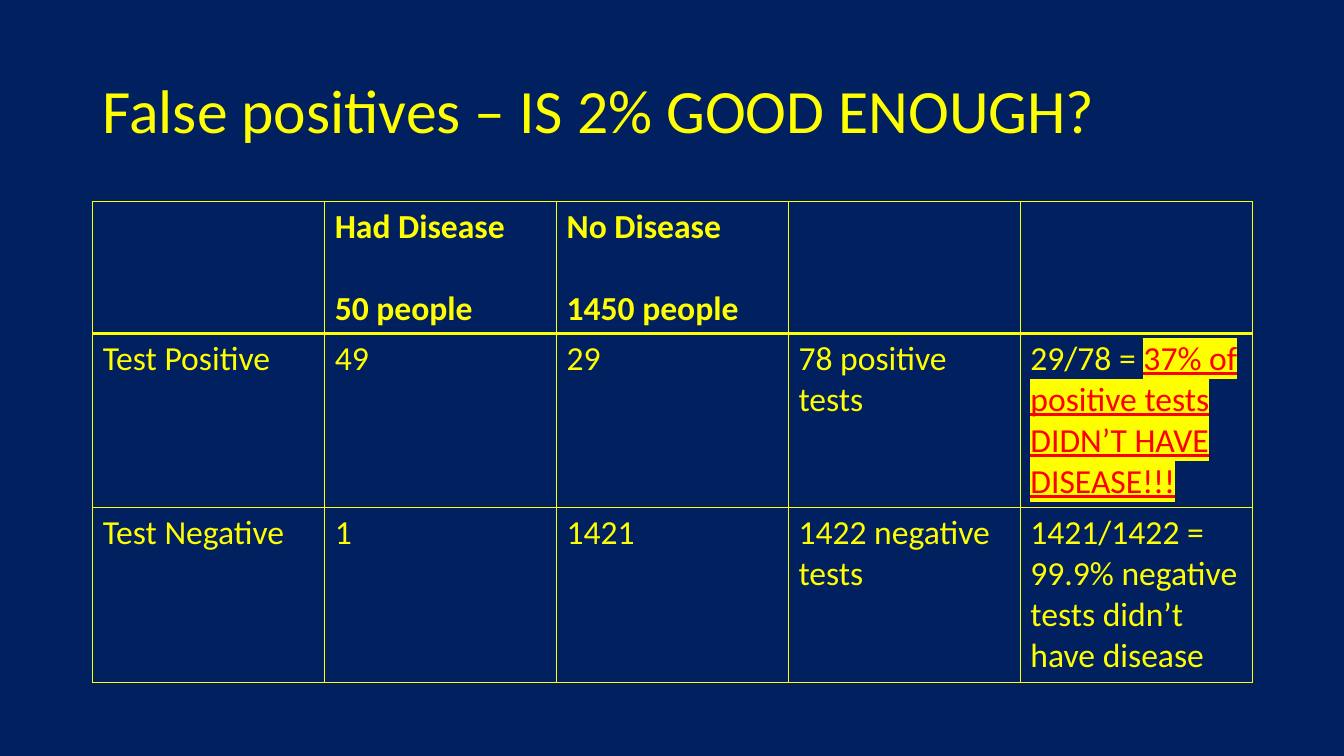
import lxml.etree
import pptx
import pptx.dml.color
import pptx.enum.text
import pptx.oxml.ns
import pptx.util

NAVY = pptx.dml.color.RGBColor(0x00, 0x20, 0x60)
YELLOW = pptx.dml.color.RGBColor(0xFF, 0xFF, 0x00)
RED = pptx.dml.color.RGBColor(0xFF, 0x00, 0x00)
FONT = "Calibri"
SLIDE_WIDTH = pptx.util.Inches(13.33)
SLIDE_HEIGHT = pptx.util.Inches(7.5)
MARGIN = pptx.util.Inches(0.92)
COLUMN_WIDTH = pptx.util.Inches(2.3)
ROW_HEIGHTS = [1.3, 1.73, 1.73]
HEADER_GAP = 29.3

RESULTS = [
    [[], ["Had Disease", "50 people"], ["No Disease", "1450 people"], [], []],
    [["Test Positive"], ["49"], ["29"], ["78 positive tests"], ["29/78 = "]],
    [["Test Negative"], ["1"], ["1421"], ["1422 negative tests"],
     ["1421/1422 = 99.9% negative tests didn’t have disease"]],
]
WARNING = "37% of positive tests DIDN’T HAVE DISEASE!!!"


def add_color(parent, color):
    fill = lxml.etree.SubElement(parent, pptx.oxml.ns.qn("a:solidFill"))
    lxml.etree.SubElement(fill, pptx.oxml.ns.qn("a:srgbClr"), val=str(color))


def add_run(paragraph, text, size, color=YELLOW, bold=False):
    run = paragraph.add_run()
    run.text = text
    run.font.name = FONT
    run.font.size = pptx.util.Pt(size)
    run.font.bold = bold
    run.font.color.rgb = color
    return run


def highlight_run(run, color):
    run.font.underline = True
    highlight = lxml.etree.Element(pptx.oxml.ns.qn("a:highlight"))
    lxml.etree.SubElement(highlight, pptx.oxml.ns.qn("a:srgbClr"), val=str(color))
    run.font.fill
    run.font._element.find(pptx.oxml.ns.qn("a:solidFill")).addnext(highlight)


def set_borders(cell, widths):
    properties = cell._tc.get_or_add_tcPr()
    for position, (side, width) in enumerate(zip("LRTB", widths)):
        line = lxml.etree.Element(
            pptx.oxml.ns.qn(f"a:ln{side}"), w=str(pptx.util.Pt(width)))
        add_color(line, YELLOW)
        properties.insert(position, line)


def add_title(slide, text):
    title = slide.shapes.add_textbox(
        MARGIN, pptx.util.Inches(0.4), COLUMN_WIDTH * 5, pptx.util.Inches(1.45))
    title.text_frame.word_wrap = True
    title.text_frame.vertical_anchor = pptx.enum.text.MSO_ANCHOR.MIDDLE
    paragraph = title.text_frame.paragraphs[0]
    paragraph.line_spacing = 0.9
    add_run(paragraph, text, 44)


def fill_cell(cell, lines, row_index):
    cell.fill.solid()
    cell.fill.fore_color.rgb = NAVY
    top = 3 if row_index == 1 else 1
    bottom = 3 if row_index == 0 else 1
    set_borders(cell, [1, 1, top, bottom])
    for index, line in enumerate(lines):
        if index == 0:
            paragraph = cell.text_frame.paragraphs[0]
        else:
            paragraph = cell.text_frame.add_paragraph()
            paragraph.space_before = pptx.util.Pt(HEADER_GAP)
        add_run(paragraph, line, 24, bold=row_index == 0)


def add_results_table(slide):
    frame = slide.shapes.add_table(
        len(RESULTS), len(RESULTS[0]), MARGIN, pptx.util.Inches(2),
        COLUMN_WIDTH * 5, pptx.util.Inches(sum(ROW_HEIGHTS)))
    table = frame.table
    table.horz_banding = False
    for column in table.columns:
        column.width = COLUMN_WIDTH
    for row_index, row in enumerate(RESULTS):
        table.rows[row_index].height = pptx.util.Inches(ROW_HEIGHTS[row_index])
        for column_index, lines in enumerate(row):
            fill_cell(table.cell(row_index, column_index), lines, row_index)
    warning_paragraph = table.cell(1, 4).text_frame.paragraphs[0]
    highlight_run(add_run(warning_paragraph, WARNING, 24, RED), YELLOW)


def main():
    presentation = pptx.Presentation()
    presentation.slide_width = SLIDE_WIDTH
    presentation.slide_height = SLIDE_HEIGHT
    slide = presentation.slides.add_slide(presentation.slide_layouts[6])
    slide.background.fill.solid()
    slide.background.fill.fore_color.rgb = NAVY
    add_title(slide, "False positives – IS 2% GOOD ENOUGH?")
    add_results_table(slide)
    presentation.save("out.pptx")


if __name__ == "__main__":
    main()
